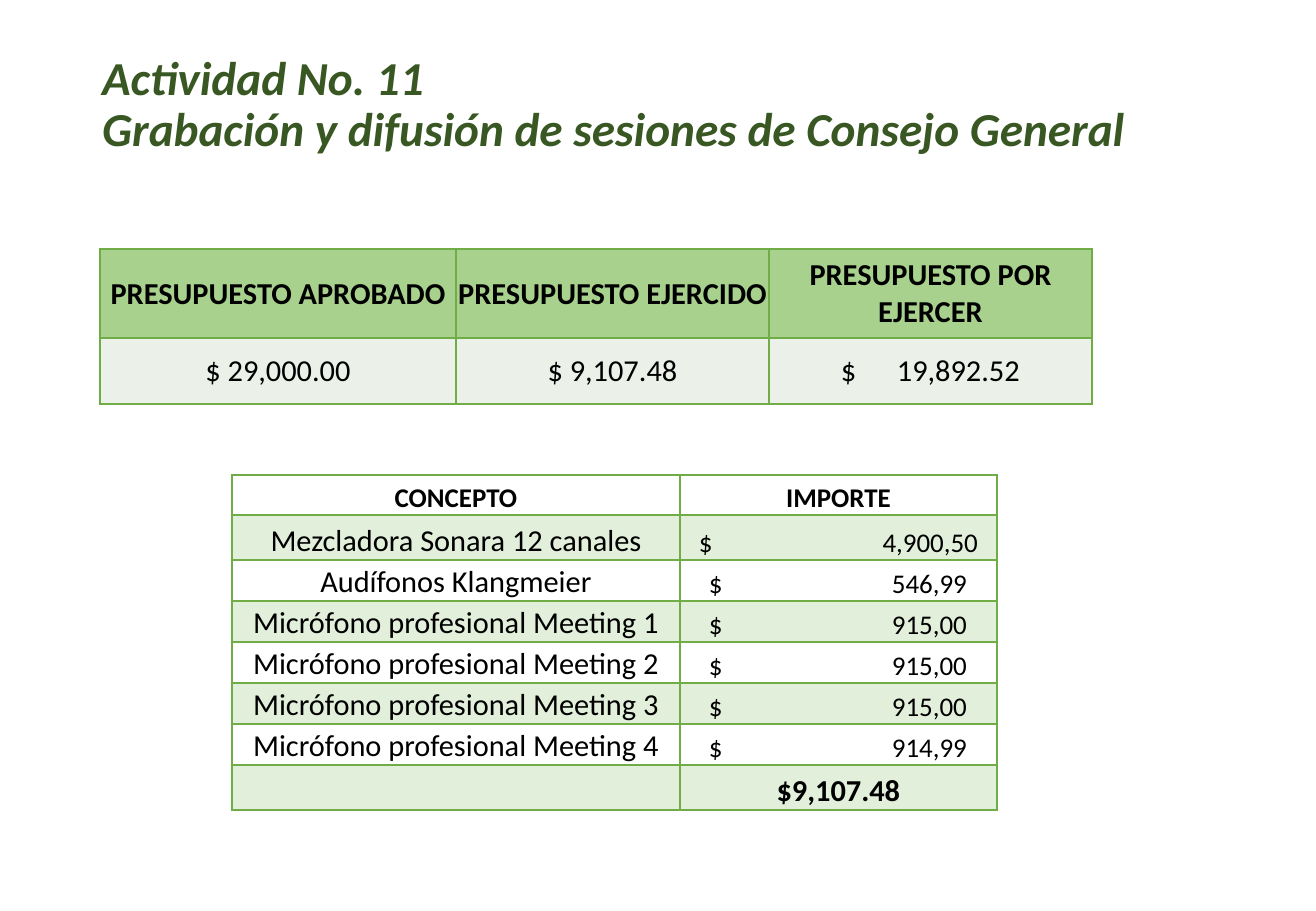
from lxml import etree
from pptx import Presentation
from pptx import util as u
from pptx.dml.color import RGBColor
from pptx.enum import text as t
from pptx.oxml.ns import qn

GREEN = "70AD47"
PALE = "E2EFDA"
BUDGET = [
    ["PRESUPUESTO APROBADO", "PRESUPUESTO EJERCIDO", "PRESUPUESTO POR EJERCER"],
    ["$ 29,000.00", "$ 9,107.48", "\t$\t19,892.52"],
]
COSTS = [
    ("Mezcladora Sonara 12 canales", "4,900,50"),
    ("Audífonos Klangmeier", "546,99"),
    ("Micrófono profesional Meeting 1", "915,00"),
    ("Micrófono profesional Meeting 2", "915,00"),
    ("Micrófono profesional Meeting 3", "915,00"),
    ("Micrófono profesional Meeting 4", "914,99"),
]
TOTAL = "$9,107.48"


def px(n):
    """Turn pixels into EMU."""
    return u.Emu(round(n * 914400 / 121.5))


def rgb(code):
    """Turn a hex string into a colour."""
    return RGBColor.from_string(code)


def write(frame, words, size=18, color="000000", bold=False, italic=False,
          align=t.PP_ALIGN.CENTER, tabs=(), space=None):
    """Write one formatted paragraph, with a left and a right tab if given."""
    para = frame.paragraphs[0]
    para.text = words
    para.alignment = t.PP_ALIGN.LEFT if tabs else align
    if space:
        para.line_spacing = space
    if tabs:
        stops = etree.SubElement(para._p.get_or_add_pPr(), qn("a:tabLst"))
        for place, kind in zip(tabs, ("l", "r")):
            etree.SubElement(stops, qn("a:tab"), pos=str(px(place)), algn=kind)
    for run in para.runs:
        font = run.font
        font.name, font.size = "Calibri", u.Pt(size)
        font.bold, font.italic = bold, italic
        font.color.rgb = rgb(color)


def edge(cell, side, width=1):
    """Draw one border of a cell."""
    line = etree.SubElement(cell._tc.get_or_add_tcPr(), qn("a:ln" + side),
                            w=str(u.Pt(width)))
    fill = etree.SubElement(line, qn("a:solidFill"))
    etree.SubElement(fill, qn("a:srgbClr"), val=GREEN)


def style(cell, fill, anchor, top=1, base=1):
    """Set the margins, borders and fill of a cell."""
    cell.margin_left = cell.margin_right = cell.margin_top = px(1)
    cell.margin_bottom = 0
    cell.vertical_anchor = anchor
    for side, width in (("L", 1), ("R", 1), ("T", top), ("B", base)):
        edge(cell, side, width)
    if fill:
        cell.fill.solid()
        cell.fill.fore_color.rgb = rgb(fill)
    else:
        cell.fill.background()


def grid(slide, left, top, cols, rows):
    """Add a plain table with the given column and row sizes."""
    table = slide.shapes.add_table(len(rows), len(cols), px(left), px(top),
                                   px(sum(cols)), px(sum(rows))).table
    table.first_row = table.horz_banding = False
    for col, size in zip(table.columns, cols):
        col.width = px(size)
    for row, size in zip(table.rows, rows):
        row.height = px(size)
    return table


def head(slide, left, top, width, height):
    """Place the title."""
    title = slide.shapes.title
    title.left, title.top = px(left), px(top)
    title.width, title.height = px(width), px(height)
    frame = title.text_frame
    frame.word_wrap = True
    frame.auto_size = t.MSO_AUTO_SIZE.NONE
    frame.vertical_anchor = t.MSO_ANCHOR.TOP
    write(frame, "Actividad No. 11\vGrabación y difusión de sesiones de Consejo General",
          size=28, color="385723", bold=True, italic=True,
          align=t.PP_ALIGN.LEFT, space=0.9)


def budget(slide, left, top):
    """Build the budget summary table."""
    table = grid(slide, left, top, [356, 313, 323], [89, 66])
    for r, row in enumerate(BUDGET):
        for c, words in enumerate(row):
            cell = table.cell(r, c)
            style(cell, "EBF1E9" if r else "A9D18E", t.MSO_ANCHOR.MIDDLE)
            write(cell.text_frame, words, bold=r == 0,
                  tabs=(71, 250) if "\t" in words else ())


def costs(slide, left, top):
    """Build the table of costs with its total."""
    rows = [("CONCEPTO", "IMPORTE"), *COSTS, ("", TOTAL)]
    last = len(rows) - 1
    table = grid(slide, left, top, [448, 317], [40, 45] + [41] * 5 + [45])
    for r, row in enumerate(rows):
        for c, words in enumerate(row):
            cell = table.cell(r, c)
            style(cell, PALE if r % 2 else None, t.MSO_ANCHOR.BOTTOM,
                  top=2 if r == 1 else 1, base=2 if r == 0 else 1)
            price = c == 1 and 0 < r < last
            tabs = ((18, 297) if r == 1 else (28, 286)) if price else ()
            write(cell.text_frame, f"\t$\t{words}" if price else words,
                  size=16 if price or r == 0 else 18,
                  bold=r in (0, last), tabs=tabs)


def main():
    """Build and save the slide."""
    deck = Presentation()
    deck.slide_width, deck.slide_height = px(1316), px(911)
    slide = deck.slides.add_slide(deck.slide_layouts[5])
    head(slide, 90, 49, 1135, 175)
    costs(slide, 232, 475)
    budget(slide, 100, 249)
    deck.save("out.pptx")


if __name__ == "__main__":
    main()
